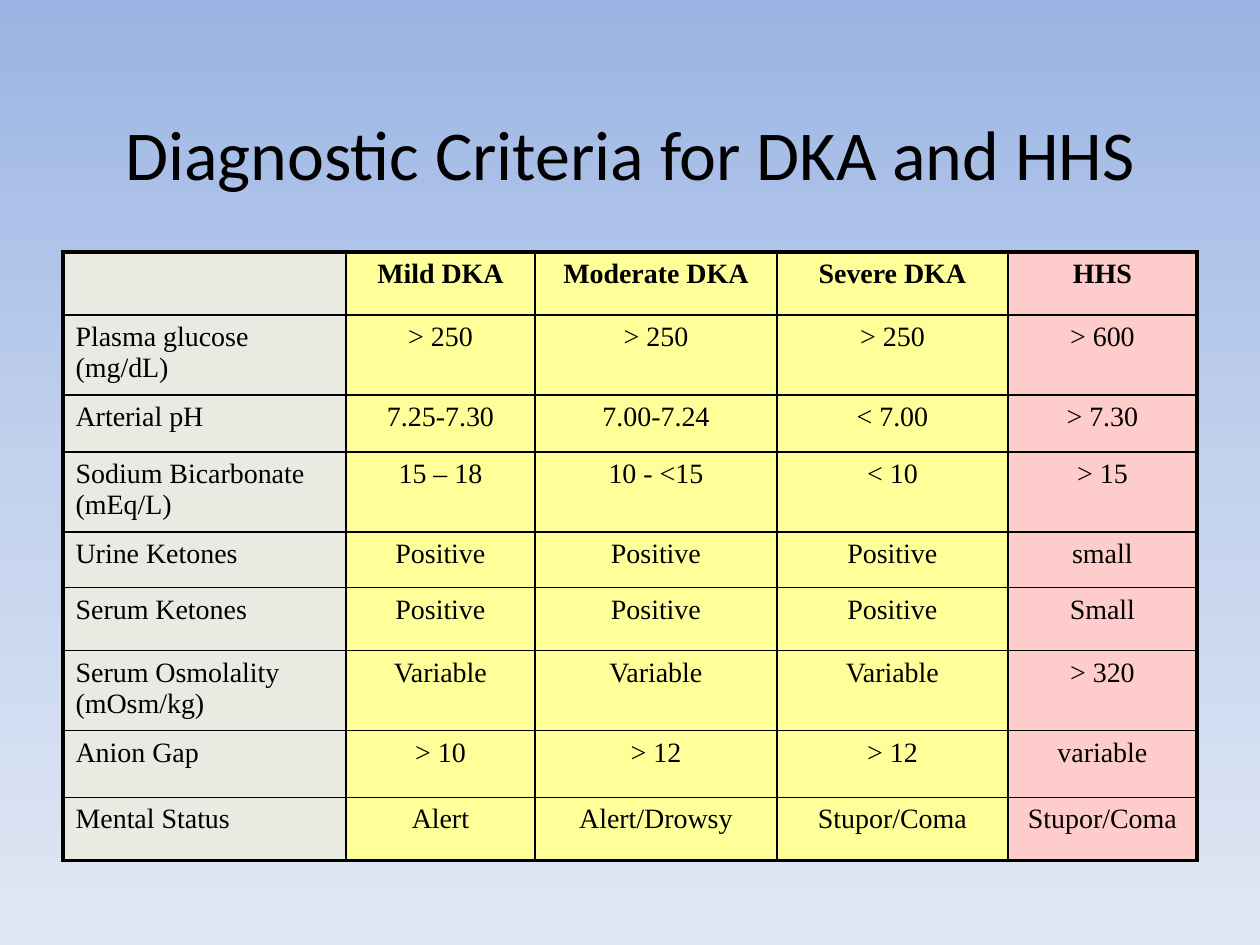
from lxml import etree
from pptx import Presentation
from pptx.dml.color import RGBColor
from pptx.enum.text import MSO_ANCHOR, PP_ALIGN
from pptx.oxml.ns import qn
from pptx.util import Pt

LEFT, CENTER = PP_ALIGN.LEFT, PP_ALIGN.CENTER
MIDDLE, TOP = MSO_ANCHOR.MIDDLE, MSO_ANCHOR.TOP
EMU_PER_PX = 914400 / 126

THEME = {
    "ink": "000000",
    "column_fills": ["E9EAE2", "FFFF99", "FFFF99", "FFFF99", "FFCCCC"],
    "background": [(0, "9AB5E4"), (50, "C2D1ED"), (100, "E1E8F5")],
    "title": {"name": "Calibri", "size": Pt(40), "bold": False},
    "header": {"name": "Times New Roman", "size": Pt(16), "bold": True},
    "body": {"name": "Times New Roman", "size": Pt(16), "bold": False},
    "frame_line": Pt(2.25),
    "grid_line": Pt(1),
}

TITLE = "Diagnostic Criteria for DKA and HHS"
TITLE_BOX = (63, 73, 1134, 158)
TABLE_BOX = (63, 252, 1134, 608)
COLUMN_WIDTHS = [283, 189, 242, 231, 189]
ROW_HEIGHTS = [63, 79, 57, 80, 56, 63, 80, 67, 63]
CRITERIA = [
    ["", "Mild DKA", "Moderate DKA", "Severe DKA", "HHS"],
    ["Plasma glucose (mg/dL)", "> 250", "> 250", "> 250", "> 600"],
    ["Arterial pH", "7.25-7.30", "7.00-7.24", "< 7.00", "> 7.30"],
    ["Sodium Bicarbonate (mEq/L)", "15 – 18", "10 - <15", "< 10", "> 15"],
    ["Urine Ketones", "Positive", "Positive", "Positive", "small"],
    ["Serum Ketones", "Positive", "Positive", "Positive", "Small"],
    ["Serum Osmolality (mOsm/kg)", "Variable", "Variable", "Variable", "> 320"],
    ["Anion Gap", "> 10", "> 12", "> 12", "variable"],
    ["Mental Status", "Alert", "Alert/Drowsy", "Stupor/Coma", "Stupor/Coma"],
]


def px(length):
    """Turn a length in px into EMU."""
    return round(length * EMU_PER_PX)


def set_attributes(target, values):
    """Set each attribute of the target from a dict."""
    for name, value in values.items():
        setattr(target, name, value)


def write_text(paragraph, wording, style, align):
    """Write one styled run into a paragraph."""
    paragraph.alignment = align
    run = paragraph.add_run()
    run.text = wording
    set_attributes(run.font, THEME[style])
    run.font.color.rgb = RGBColor.from_string(THEME["ink"])


def add_color(parent, color):
    """Append an RGB colour element to the parent."""
    etree.SubElement(parent, qn("a:srgbClr"), val=color)


def paint_background(slide):
    """Fill the slide with the vertical three-stop gradient."""
    fill = slide.background.fill
    fill.gradient()
    fill.gradient_angle = 270
    stops = slide.element.find(".//" + qn("a:gsLst"))
    for stop in list(stops):
        stops.remove(stop)
    for percent, color in THEME["background"]:
        add_color(etree.SubElement(stops, qn("a:gs"), pos=str(percent * 1000)), color)


def add_title(slide, box):
    """Place the centred title in its box."""
    frame = slide.shapes.add_textbox(*map(px, box)).text_frame
    set_attributes(frame, {"word_wrap": True, "vertical_anchor": MIDDLE})
    write_text(frame.paragraphs[0], TITLE, "title", CENTER)


def draw_borders(cell, outer_sides):
    """Draw the cell borders, heavier on the sides that frame the table."""
    properties = cell._tc.get_or_add_tcPr()
    for side, is_outer in outer_sides.items():
        width = THEME["frame_line" if is_outer else "grid_line"]
        line = etree.SubElement(properties, qn(f"a:ln{side}"), w=str(width))
        add_color(etree.SubElement(line, qn("a:solidFill")), THEME["ink"])


def add_space_before(paragraph, percent):
    """Set the space before a paragraph as a share of its line height."""
    spacing = etree.SubElement(paragraph._p.get_or_add_pPr(), qn("a:spcBef"))
    etree.SubElement(spacing, qn("a:spcPct"), val=str(percent * 1000))


def add_criteria_table(slide, box):
    """Place the criteria table in its box."""
    last_row, last_column = len(ROW_HEIGHTS) - 1, len(COLUMN_WIDTHS) - 1
    table = slide.shapes.add_table(last_row + 1, last_column + 1, *map(px, box)).table
    set_attributes(table, {"first_row": False, "horz_banding": False})
    for column, width in zip(table.columns, COLUMN_WIDTHS):
        column.width = px(width)
    for row, height in zip(table.rows, ROW_HEIGHTS):
        row.height = px(height)
    for r, criterion in enumerate(CRITERIA):
        for c, value in enumerate(criterion):
            cell = table.cell(r, c)
            cell.vertical_anchor = TOP
            draw_borders(cell, {"L": c == 0, "R": c == last_column,
                                "T": r == 0, "B": r == last_row})
            cell.fill.solid()
            cell.fill.fore_color.rgb = RGBColor.from_string(THEME["column_fills"][c])
            if value:
                paragraph = cell.text_frame.paragraphs[0]
                write_text(paragraph, value, "body" if r else "header",
                           CENTER if c else LEFT)
                add_space_before(paragraph, 20)


def main():
    """Build and save the slide."""
    deck = Presentation()
    set_attributes(deck, {"slide_width": px(1260), "slide_height": px(945)})
    slide = deck.slides.add_slide(deck.slide_layouts[6])
    paint_background(slide)
    add_title(slide, TITLE_BOX)
    add_criteria_table(slide, TABLE_BOX)
    deck.save("out.pptx")


if __name__ == "__main__":
    main()
